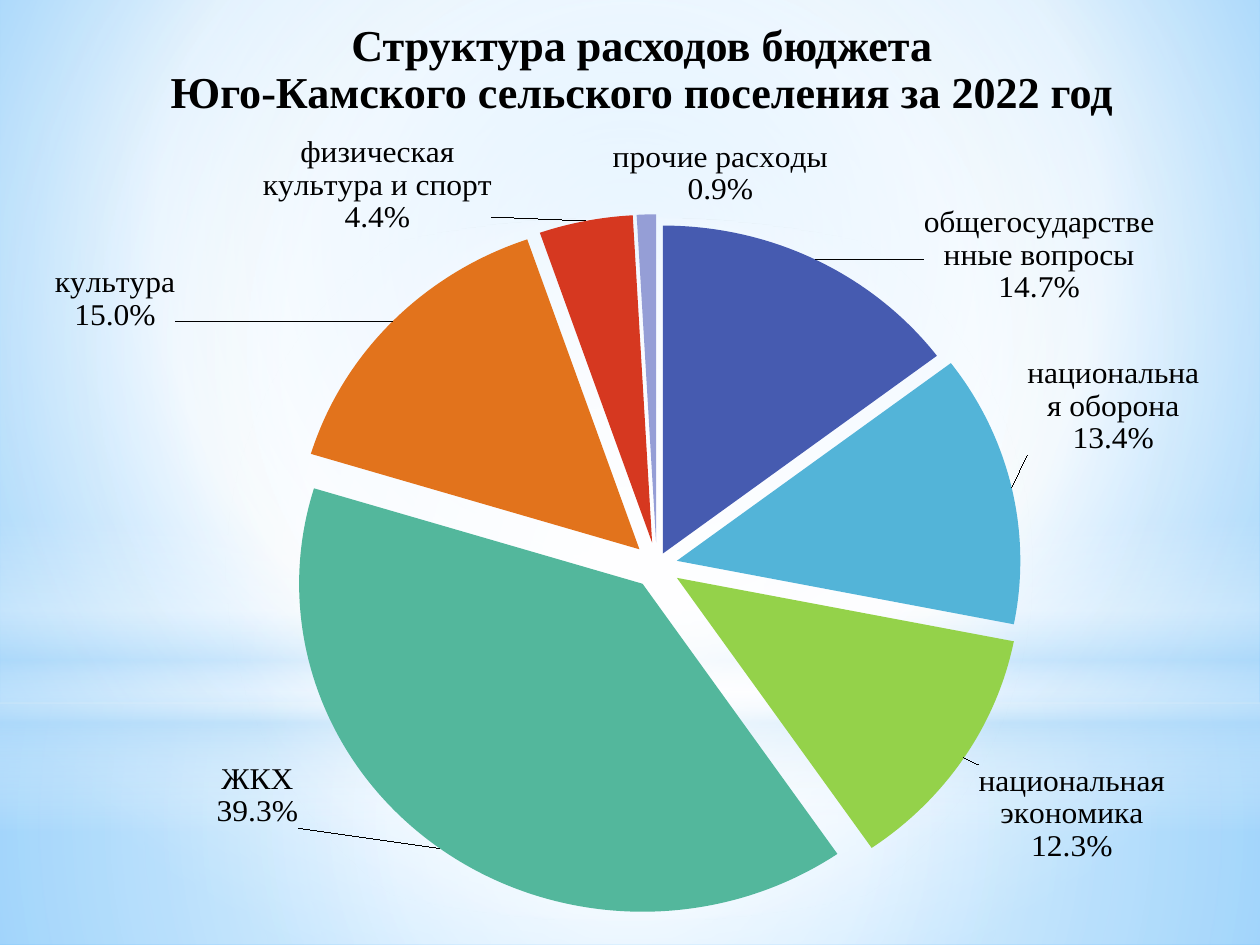
from lxml import etree
from pptx import Presentation
from pptx import util as u
from pptx.chart.data import CategoryChartData
from pptx.dml.color import RGBColor
from pptx.enum import chart as charts, shapes, text
from pptx.oxml import ns, parse_xml

COLORS = {
    "text": "000000", "white": "FFFFFF", "haze": "B4DCFA",
    "sky": "9ED5FF", "deep": "5BB9FF",
    "blue": "465BB0", "cyan": "53B4D8", "lime": "94D24A", "green": "53B79C",
    "orange": "E2731C", "red": "D63820", "lilac": "959ED6",
}
FONT = "Times New Roman"

# category, share, colour, explosion in %, label offset as shares of the chart
EXPENSES = [
    ("общегосударственные вопросы", 0.147, "blue", 4, (0.086, 0.066)),
    ("национальная оборона", 0.134, "cyan", 6, (0.007, -0.04)),
    ("национальная экономика", 0.123, "lime", 7, (0.007, 0.004)),
    ("ЖКХ", 0.393, "green", 7, (-0.113, -0.119)),
    ("культура", 0.15, "orange", 7, (-0.174, 0.019)),
    ("физическая культура и спорт", 0.044, "red", 7, (-0.076, 0.004)),
    ("прочие расходы", 0.009, "lilac", 7, (0.061, -0.002)),
]


def color(name):
    return RGBColor.from_string(COLORS[name])


def gradient(stops, focus=None):
    """Gradient fill; focus gives the circle's left, top, right, bottom in %."""
    marks = "".join(
        f'<a:gs pos="{place * 1000}"><a:srgbClr val="{COLORS[name]}">'
        f'<a:alpha val="{alpha * 1000}"/></a:srgbClr></a:gs>'
        for place, name, alpha in stops)
    if focus:
        sides = " ".join(f'{side}="{value * 1000}"' for side, value in zip("ltrb", focus))
        course = f'<a:path path="circle"><a:fillToRect {sides}/></a:path>'
    else:
        course = '<a:lin ang="5400000" scaled="0"/>'
    return parse_xml(f'<a:gradFill {ns.nsdecls("a")} rotWithShape="1">'
                     f'<a:gsLst>{marks}</a:gsLst>{course}</a:gradFill>')


def layout_xml(**settings):
    """Manual chart layout from its settings, in schema order."""
    layout = etree.Element(ns.qn("c:layout"))
    manual = etree.SubElement(layout, ns.qn("c:manualLayout"))
    for key, value in settings.items():
        etree.SubElement(manual, ns.qn(f"c:{key}")).set("val", str(value))
    return layout


class SlideBuilder:
    def __init__(self, presentation):
        self.width, self.height = presentation.slide_width, presentation.slide_height
        self.slide = presentation.slides.add_slide(presentation.slide_layouts[5])

    def box(self, left, top, width, height):
        """Turn shares of the slide into lengths."""
        return (int(left * self.width), int(top * self.height),
                int(width * self.width), int(height * self.height))

    def background(self, stops, focus):
        fill = self.slide.background.fill
        fill.solid()
        properties = self.slide.background._cSld.bg.bgPr
        properties.replace(properties[0], gradient(stops, focus))

    def glow(self, kind, place, stops, focus=None):
        shape = self.slide.shapes.add_shape(kind, *self.box(*place))
        shape.shadow.inherit = False
        shape.line.fill.background()
        shape.fill.solid()
        properties = shape._element.spPr
        properties.replace(properties.find(ns.qn("a:solidFill")), gradient(stops, focus))

    def title(self, place, lines, size):
        title = self.slide.shapes.title
        title.left, title.top, title.width, title.height = self.box(*place)
        frame = title.text_frame
        frame.vertical_anchor = text.MSO_ANCHOR.MIDDLE
        frame.word_wrap = True
        for index, line in enumerate(lines):
            paragraph = frame.add_paragraph() if index else frame.paragraphs[0]
            paragraph.alignment = text.PP_ALIGN.CENTER
            paragraph.line_spacing = 0.9
            run = paragraph.add_run()
            run.text = line
            run.font.name, run.font.size, run.font.bold = FONT, u.Pt(size), True
            run.font.color.rgb = color("text")
        self.slide.shapes._spTree.append(title._element)  # above the glows

    def pie(self, place, rows, plot_place, size):
        data = CategoryChartData(number_format="0.0%")
        data.categories = [row[0] for row in rows]
        data.add_series("Series 1", [row[1] for row in rows])
        chart = self.slide.shapes.add_chart(
            charts.XL_CHART_TYPE.PIE, *self.box(*place), data).chart
        chart.has_legend = chart.has_title = False
        chart.font.name, chart.font.size = "Cabin", u.Pt(18)
        chart.font.color.rgb = color("text")

        area = chart._chartSpace.chart.plotArea
        for old in area.findall(ns.qn("c:layout")):
            area.remove(old)
        x, y, w, h = plot_place
        area.insert(0, layout_xml(layoutTarget="inner", xMode="edge", yMode="edge",
                                  x=x, y=y, w=w, h=h))

        plot = chart.plots[0]
        plot.vary_by_categories = True
        series = plot.series[0]
        labels = series.data_labels
        labels.show_value = labels.show_category_name = True
        labels.show_percentage = labels.show_legend_key = False
        labels.number_format, labels.number_format_is_linked = "0.0%", False
        labels.position = charts.XL_LABEL_POSITION.OUTSIDE_END
        labels.font.name, labels.font.size = FONT, u.Pt(size)
        labels.font.color.rgb = color("text")
        self.separate(labels._element)

        for index, (_, _, name, burst, offset) in enumerate(rows):
            point = series.points[index]
            point.format.fill.solid()
            point.format.fill.fore_color.rgb = color(name)
            point.format.line.fill.background()
            explosion = etree.Element(ns.qn("c:explosion"))
            explosion.set("val", str(burst))
            point_xml = series._element.findall(ns.qn("c:dPt"))[index]
            point_xml.find(ns.qn("c:spPr")).addprevious(explosion)
            self.place_label(point.data_label, offset, size)

    def place_label(self, label, offset, size):
        label.position = charts.XL_LABEL_POSITION.OUTSIDE_END
        label.font.name, label.font.size = FONT, u.Pt(size)
        label.font.color.rgb = color("text")
        element = label._dLbl
        element.find(ns.qn("c:idx")).addnext(layout_xml(x=offset[0], y=offset[1]))
        number = etree.Element(ns.qn("c:numFmt"))
        number.set("formatCode", "0.0%")
        number.set("sourceLinked", "0")
        element.find(ns.qn("c:layout")).addnext(number)
        for flag, shown in (("Val", 1), ("CatName", 1), ("Percent", 0), ("LegendKey", 0)):
            element.find(ns.qn(f"c:show{flag}")).set("val", str(shown))
        self.separate(element)

    @staticmethod
    def separate(element):
        """Put the value on its own line under the category."""
        separator = etree.Element(ns.qn("c:separator"))
        separator.text = "\n"
        element.find(ns.qn("c:showBubbleSize")).addnext(separator)


def main():
    presentation = Presentation()
    presentation.slide_width, presentation.slide_height = u.Inches(10), u.Inches(7.5)
    builder = SlideBuilder(presentation)
    rectangle, oval = shapes.MSO_SHAPE.RECTANGLE, shapes.MSO_SHAPE.OVAL
    middle, horizon = (50, 50, 50, 50), 0.744

    # Sky background with soft glows
    builder.background([(0, "sky", 100), (60, "white", 100), (100, "deep", 100)],
                       (20, 10, 20, 60))
    builder.glow(rectangle, (0, horizon, 1, 1 - horizon),
                 [(0, "white", 91), (37, "white", 76), (100, "haze", 79)], middle)
    builder.glow(rectangle, (0, 0, 1, horizon),
                 [(0, "white", 89), (48, "white", 62), (100, "haze", 79)], middle)
    builder.glow(rectangle, (0, 0.55, 1, 0.33),
                 [(0, "white", 0), (29, "white", 30), (45, "haze", 40),
                  (55, "white", 26), (65, "haze", 60), (100, "white", 0)])
    builder.glow(oval, (0, 0.23, 1, horizon),
                 [(0, "white", 100), (56, "white", 0)], middle)

    # Title
    builder.title((0.035, 0.017, 0.949, 0.116),
                  ["Структура расходов бюджета",
                   "Юго-Камского сельского поселения за 2022 год"], 25.2)

    # Expenses by category
    builder.pie((0.02, 0.123, 0.965, 0.85), EXPENSES,
                (0.237, 0.122, 0.565, 0.875), 18)

    presentation.save("out.pptx")


if __name__ == "__main__":
    main()
